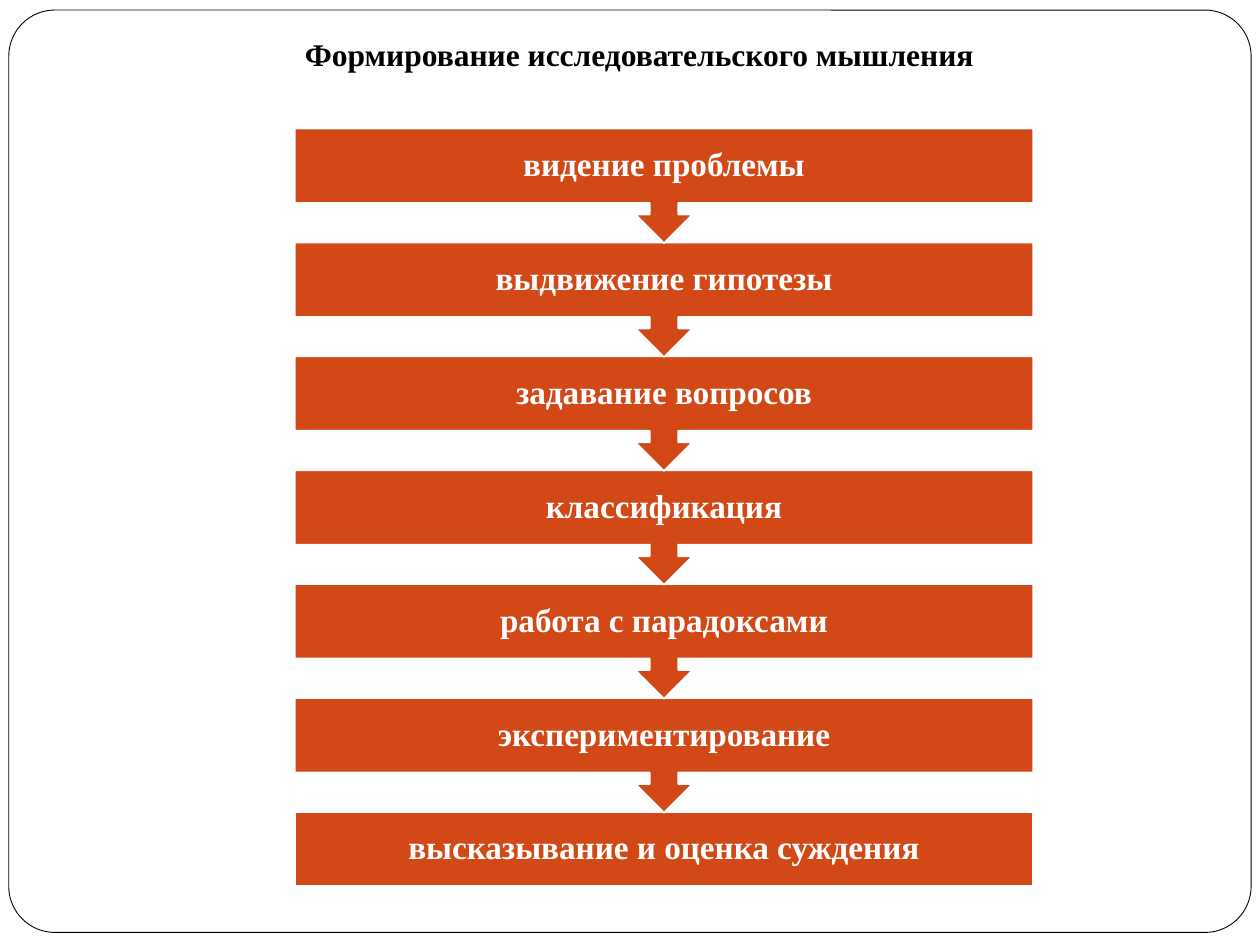
import dataclasses

import pptx
import pptx.dml.color
import pptx.enum.shapes
import pptx.enum.text
import pptx.util

Inches = pptx.util.Inches
Pt = pptx.util.Pt
Kind = pptx.enum.shapes.MSO_SHAPE
Align = pptx.enum.text.PP_ALIGN
Anchor = pptx.enum.text.MSO_ANCHOR

WHITE, BLACK, RUST = "FFFFFF", "000000", "D34817"
LEFT, TOP, WIDTH, PITCH = 2.34, 1.02, 5.86, 0.9
BOX, CALL = 0.59, 0.91
STEPS = [
    "видение проблемы",
    "выдвижение гипотезы",
    "задавание вопросов",
    "классификация",
    "работа с парадоксами",
    "экспериментирование",
    "высказывание и оценка суждения",
]


@dataclasses.dataclass
class Block:
    kind: Kind
    left: float
    top: float
    width: float
    height: float
    fill: str
    line: str
    weight: float


def color(code: str) -> pptx.dml.color.RGBColor:
    return pptx.dml.color.RGBColor.from_string(code)


def draw(slide, block: Block):
    shape = slide.shapes.add_shape(
        block.kind, Inches(block.left), Inches(block.top),
        Inches(block.width), Inches(block.height))
    shape.shadow.inherit = False
    shape.fill.solid()
    shape.fill.fore_color.rgb = color(block.fill)
    shape.line.color.rgb = color(block.line)
    shape.line.width = Pt(block.weight)
    return shape


def write(shape, text: str, size: float, ink: str, frame: dict) -> None:
    """Set one centred bold line, with the given text frame values."""
    body = shape.text_frame
    body.text = text
    for name, value in frame.items():
        setattr(body, name, value)
    para = body.paragraphs[0]
    para.alignment = Align.CENTER
    para.line_spacing = 0.9 if ink == WHITE else 1.0
    font = para.runs[0].font
    for name, value in {"name": "Times New Roman", "size": Pt(size), "bold": True}.items():
        setattr(font, name, value)
    font.color.rgb = color(ink)


def main() -> None:
    deck = pptx.Presentation()
    deck.slide_width, deck.slide_height = Inches(10), Inches(7.5)
    slide = deck.slides.add_slide(deck.slide_layouts[5])

    title = slide.shapes.title
    place = {"left": 0.7, "top": 0.23, "width": 8.75, "height": 0.4}
    for name, value in place.items():
        setattr(title, name, Inches(value))
    write(title, "Формирование исследовательского мышления", 18, BLACK, {
        "word_wrap": True,
        "vertical_anchor": Anchor.TOP,
        "auto_size": pptx.enum.text.MSO_AUTO_SIZE.SHAPE_TO_FIT_TEXT,
    })

    border = draw(slide, Block(
        Kind.ROUNDED_RECTANGLE, 0.07, 0.08, 9.86, 7.32, WHITE, BLACK, 0.5))
    border.adjustments[0] = 0.05
    title.element.addprevious(border.element)  # behind the title

    sides = ("left", "top", "right", "bottom")
    inset = {f"margin_{side}": Inches(0.15) for side in sides}
    inset |= {"word_wrap": True, "vertical_anchor": Anchor.MIDDLE}
    last = len(STEPS) - 1
    # Bottom step first, so each arrow tip lies over the step below it
    for row in range(last, -1, -1):
        kind, height = (Kind.RECTANGLE, BOX) if row == last else (
            Kind.DOWN_ARROW_CALLOUT, CALL)
        step = draw(slide, Block(
            kind, LEFT, TOP + row * PITCH + row * 0.004, WIDTH, height, RUST, WHITE, 1))
        write(step, STEPS[row], 19, WHITE, inset)

    deck.save("out.pptx")


if __name__ == "__main__":
    main()
